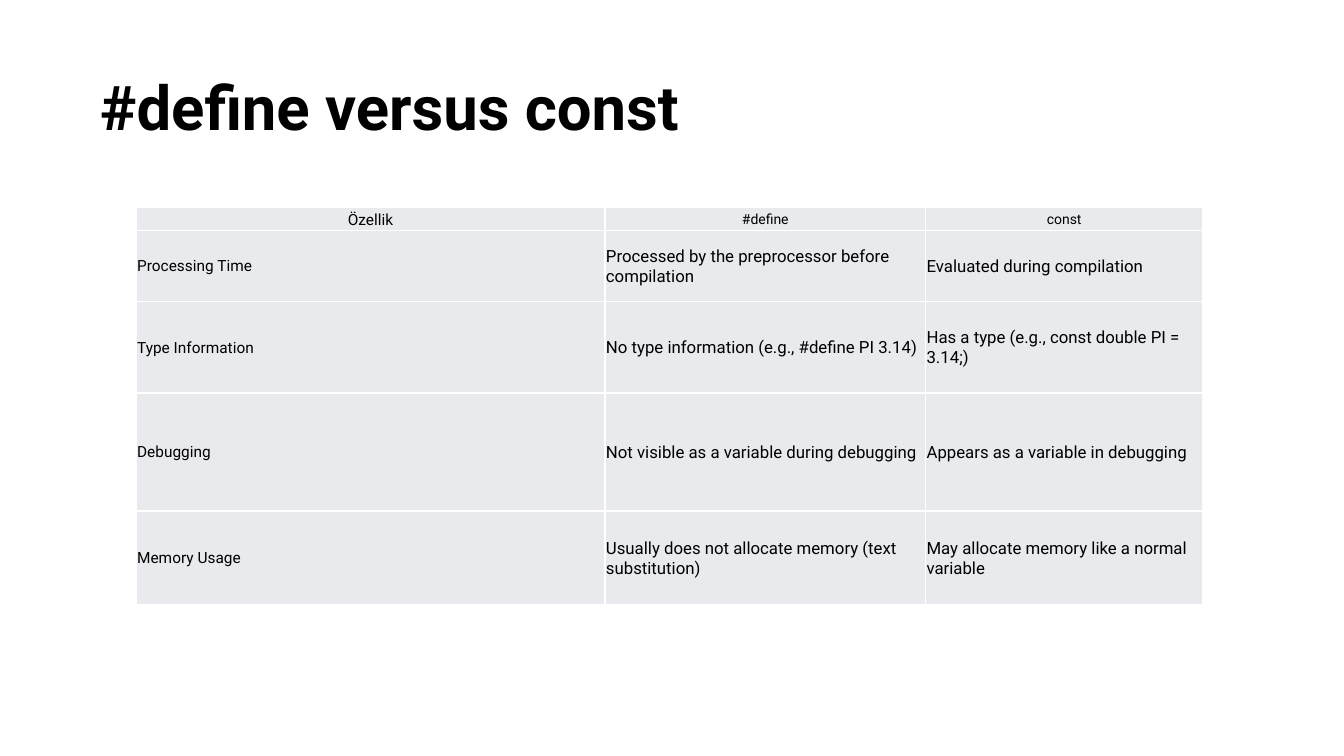
"""Build a slide with a table that compares #define and const."""
from lxml.etree import SubElement as Sub
from pptx import Presentation
from pptx.dml.color import RGBColor as RGB
from pptx.enum.text import MSO_ANCHOR as Anchor, PP_ALIGN as Align
from pptx.oxml.ns import qn
from pptx.util import Inches, Pt

HUES = {"text": "000000", "cell": "E8EAED", "line": "FFFFFF"}
FONT = "Roboto"
ROWS = [
    ("Özellik", "#define", "const"),
    ("Processing Time", "Processed by the preprocessor before compilation",
     "Evaluated during compilation"),
    ("Type Information", "No type information (e.g., #define PI 3.14)",
     "Has a type (e.g., const double PI = 3.14;)"),
    ("Debugging", "Not visible as a variable during debugging",
     "Appears as a variable in debugging"),
    ("Memory Usage", "Usually does not allocate memory (text substitution)",
     "May allocate memory like a normal variable"),
]
WIDTHS = [4.65, 3.18, 2.75]
HEIGHTS = [0.23, 0.7, 0.91, 1.17, 0.93]


def style(para, size, align, bold=False):
    para.alignment = align
    for run in para.runs:
        font = run.font
        font.name, font.size, font.bold = FONT, Pt(size), bold
        font.color.rgb = RGB.from_string(HUES["text"])


def edge(cell):
    props = cell._tc.get_or_add_tcPr()
    for side in ("lnL", "lnR", "lnT", "lnB"):
        line = Sub(props, qn(f"a:{side}"), w=str(Pt(1)))
        fill = Sub(line, qn("a:solidFill"))
        Sub(fill, qn("a:srgbClr"), val=HUES["line"])


deck = Presentation()
deck.slide_width, deck.slide_height = Inches(13.33), Inches(7.5)
slide = deck.slides.add_slide(deck.slide_layouts[5])

title = slide.shapes.title
title.left, title.top = Inches(0.89), Inches(0.37)
title.width, title.height = Inches(11.5), Inches(1.45)
frame = title.text_frame
frame.text = "#define versus const"
frame.vertical_anchor = Anchor.MIDDLE
frame.paragraphs[0].line_spacing = 0.9
style(frame.paragraphs[0], 44, Align.LEFT, True)

table = slide.shapes.add_table(
    len(ROWS), len(WIDTHS), Inches(1.35), Inches(2.06),
    Inches(sum(WIDTHS)), Inches(sum(HEIGHTS))).table
table.first_row = table.horz_banding = False
for col, width in zip(table.columns, WIDTHS):
    col.width = Inches(width)

for r, (texts, height) in enumerate(zip(ROWS, HEIGHTS)):
    table.rows[r].height = Inches(height)
    for c, text in enumerate(texts):
        cell = table.cell(r, c)
        cell.text_frame.text = text
        cell.vertical_anchor = Anchor.MIDDLE
        cell.margin_left = cell.margin_right = cell.margin_top = Inches(0.01)
        cell.margin_bottom = 0
        edge(cell)
        cell.fill.solid()
        cell.fill.fore_color.rgb = RGB.from_string(HUES["cell"])
        size = 11 if c == 0 else 10 if r == 0 else 12
        align = Align.CENTER if r == 0 else Align.LEFT
        style(cell.text_frame.paragraphs[0], size, align)

deck.save("out.pptx")
